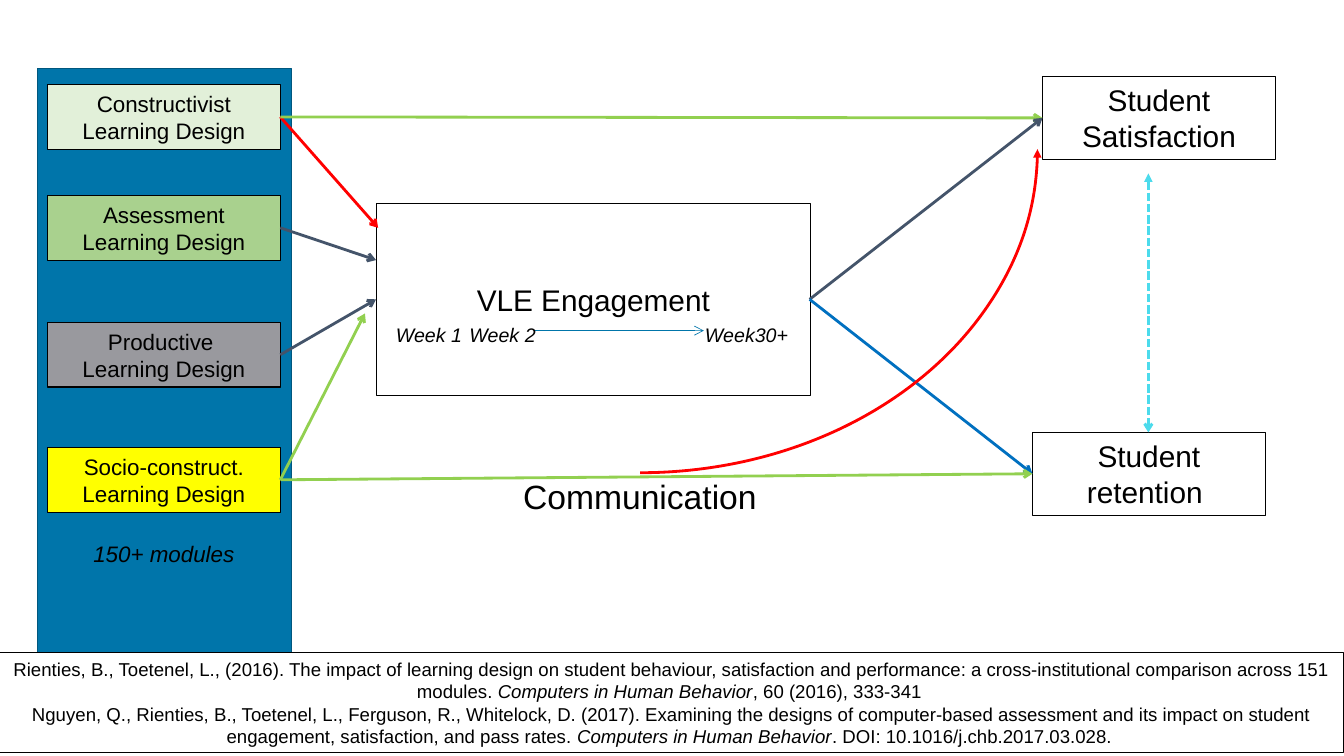
import pptx
import pptx.util
import pptx.dml.color
import pptx.enum.dml
import pptx.enum.shapes
import pptx.enum.text
import pptx.oxml.ns
import lxml.etree

Inches = pptx.util.Inches
Shapes = pptx.enum.shapes.MSO_SHAPE
Align = pptx.enum.text.PP_ALIGN


def paint(fill, color):
    fill.solid()
    fill.fore_color.rgb = pptx.dml.color.RGBColor.from_string(color)


def write(box, *paragraphs, size, italic=False, align=Align.CENTER, wrap=True,
          anchor=pptx.enum.text.MSO_ANCHOR.MIDDLE):
    frame = box.text_frame
    frame.word_wrap = wrap
    frame.vertical_anchor = anchor
    for index, pieces in enumerate(paragraphs):
        para = frame.paragraphs[0] if index == 0 else frame.add_paragraph()
        para.alignment = align
        for position, piece in enumerate(pieces.split("*")):
            span = para.add_run()
            span.text = piece
            span.font.name = "Arial"
            span.font.size = pptx.util.Pt(size)
            span.font.italic = italic or position % 2 == 1
            paint(span.font.fill, "000000")


deck = pptx.Presentation()
deck.slide_width = Inches(13.33)
deck.slide_height = Inches(7.5)
page = deck.slides.add_slide(deck.slide_layouts[6])

panel = page.shapes.add_shape(Shapes.RECTANGLE, Inches(0.37), Inches(0.68), Inches(2.52), Inches(5.8))
panel.shadow.inherit = False
paint(panel.fill, "0075AA")
paint(panel.line.fill, "00577E")
panel.line.width = pptx.util.Pt(1)

references = [
    "Rienties, B., Toetenel, L., (2016). The impact of learning design on student behaviour, "
    "satisfaction and performance: a cross-institutional comparison across 151 modules. "
    "*Computers in Human Behavior*, 60 (2016), 333-341 ",
    "Nguyen, Q., Rienties, B., Toetenel, L., Ferguson, R., Whitelock, D. (2017). Examining the "
    "designs of computer-based assessment and its impact on student engagement, satisfaction, "
    "and pass rates. *Computers in Human Behavior*. DOI: 10.1016/j.chb.2017.03.028. ",
]
boxes = [
    (0.47, 0.84, 2.31, 0.64, "E2F0D9", 16, ["Constructivist Learning Design"]),
    (0.47, 1.94, 2.31, 0.64, "A9D18E", 16, ["Assessment Learning Design"]),
    (0.47, 3.2, 2.31, 0.64, "99999E", 16, ["Productive ", "Learning Design"]),
    (0.47, 4.44, 2.31, 0.64, "FFFF00", 16, ["Socio-construct. Learning Design"]),
    (3.73, 2.02, 4.31, 1.9, None, 21.3, ["VLE Engagement"]),
    (10.34, 0.76, 2.31, 0.82, None, 21.3, ["Student Satisfaction"]),
    (10.24, 4.29, 2.31, 0.82, None, 21.3, ["Student retention "]),
    (0, 6.47, 13.33, 1, "FFFFFF", 13.3, references),
]
for left, top, width, height, color, size, lines in boxes:
    box = page.shapes.add_shape(Shapes.RECTANGLE, Inches(left), Inches(top), Inches(width), Inches(height))
    box.shadow.inherit = False
    if color:
        paint(box.fill, color)
    else:
        box.fill.background()
    paint(box.line.fill, "000000")
    box.line.width = pptx.util.Pt(0.75)
    write(box, *lines, size=size)

arrows = [
    (2.78, 1.16, 3.75, 2.26, "FF0000", 2),
    (2.78, 2.26, 3.73, 2.58, "44546A", 2),
    (2.78, 3.52, 3.73, 2.97, "44546A", 2),
    (2.78, 4.76, 3.62, 3.11, "92D050", 2),
    (2.78, 1.16, 10.34, 1.17, "92D050", 2),
    (8.03, 2.97, 10.34, 1.17, "44546A", 2),
    (8.03, 2.97, 10.24, 4.7, "0070C0", 2),
    (2.78, 4.76, 10.24, 4.7, "92D050", 2),
    (5.3, 3.28, 6.98, 3.28, "0075AA", 0.5),
    (11.39, 1.72, 11.39, 4.29, "4CDBEC", 2),
]
for x1, y1, x2, y2, color, weight in arrows:
    arrow = page.shapes.add_connector(
        pptx.enum.shapes.MSO_CONNECTOR.STRAIGHT, Inches(x1), Inches(y1), Inches(x2), Inches(y2))
    paint(arrow.line.fill, color)
    arrow.line.width = pptx.util.Pt(weight)
    outline = arrow.line._get_or_add_ln()
    if x1 == x2:
        arrow.line.dash_style = pptx.enum.dml.MSO_LINE.SQUARE_DOT
        lxml.etree.SubElement(outline, pptx.oxml.ns.qn("a:headEnd"), type="triangle")
    lxml.etree.SubElement(outline, pptx.oxml.ns.qn("a:tailEnd"), type="arrow")
    lxml.etree.SubElement(arrow._element.spPr, pptx.oxml.ns.qn("a:effectLst"))

labels = [
    (0.47, 5.31, 2.31, 0.37, "150+ modules", 16),
    (3.73, 3.15, 1.05, 0.34, "Week 1", 14),
    (4.46, 3.15, 1.05, 0.34, "Week 2", 14),
    (6.88, 3.15, 1.05, 0.34, "Week30+", 14),
]
for left, top, width, height, words, size in labels:
    label = page.shapes.add_textbox(Inches(left), Inches(top), Inches(width), Inches(height))
    write(label, words, size=size, italic=True, anchor=pptx.enum.text.MSO_ANCHOR.TOP)

communication = page.shapes.add_textbox(Inches(5.09), Inches(4.67), Inches(2.54), Inches(0.5))
write(communication, "Communication", size=24, align=Align.LEFT, wrap=False,
      anchor=pptx.enum.text.MSO_ANCHOR.TOP)

curve = page.shapes.add_shape(Shapes.ARC, Inches(2.41), Inches(-1.73), Inches(7.88), Inches(6.42))
curve.shadow.inherit = False
curve.fill.background()
paint(curve.line.fill, "FF0000")
curve.line.width = pptx.util.Pt(2)
curve._element.spPr.find(pptx.oxml.ns.qn("a:xfrm")).set("flipV", "1")
lxml.etree.SubElement(curve.line._get_or_add_ln(), pptx.oxml.ns.qn("a:tailEnd"), type="triangle")

deck.save("out.pptx")
